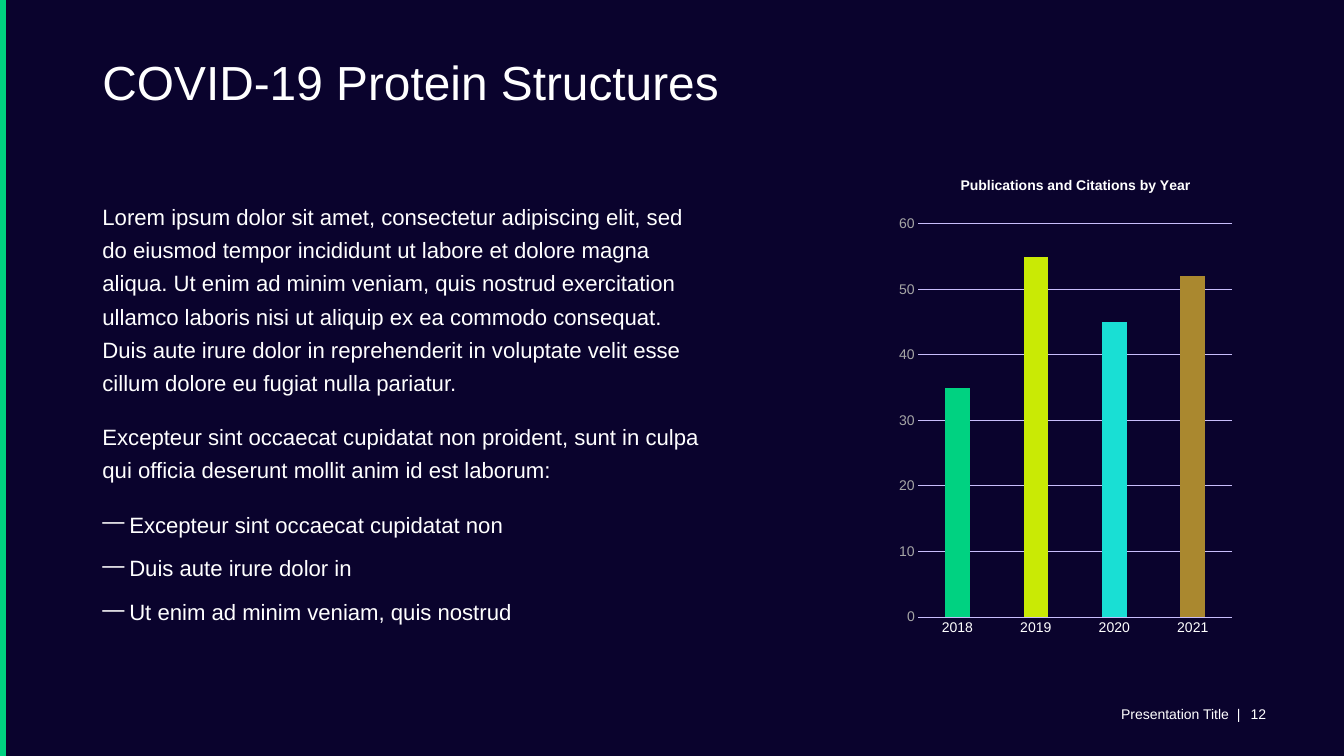
import pptx
import pptx.util
import pptx.chart.data
import pptx.dml.color
import pptx.enum.chart
import pptx.enum.shapes
import pptx.enum.text
import pptx.oxml
import pptx.oxml.ns

Pt = pptx.util.Pt
RGB = pptx.dml.color.RGBColor
ALIGN = pptx.enum.text.PP_ALIGN
NAVY = RGB(0x0A, 0x03, 0x2D)
GREEN = RGB(0x00, 0xD2, 0x81)
LIME = RGB(0xC9, 0xEA, 0x05)
CYAN = RGB(0x19, 0xDF, 0xD4)
GOLD = RGB(0xAA, 0x88, 0x2F)
LILAC = RGB(0xC8, 0xBE, 0xFB)
GREY = RGB(0xA6, 0xA6, 0xA6)
WHITE = RGB(0xFF, 0xFF, 0xFF)

deck = pptx.Presentation()
deck.slide_width, deck.slide_height = Pt(1152), Pt(648)
slide = deck.slides.add_slide(deck.slide_layouts[6])
slide.background.fill.solid()
slide.background.fill.fore_color.rgb = NAVY


def add_text(left, top, width, height, paras, size, lines=1.0,
             align=ALIGN.LEFT, anchor=pptx.enum.text.MSO_ANCHOR.TOP):
    box = slide.shapes.add_textbox(Pt(left), Pt(top), Pt(width), Pt(height))
    frame = box.text_frame
    frame.word_wrap = True
    frame.vertical_anchor = anchor
    frame.margin_left = frame.margin_top = 0
    frame.margin_right = frame.margin_bottom = 0
    for i, (text, gap, mark) in enumerate(paras):
        para = frame.add_paragraph() if i else frame.paragraphs[0]
        para.alignment = align
        para.line_spacing = lines
        para.space_before = Pt(gap)
        if mark:
            props = para._p.get_or_add_pPr()
            props.set("marL", str(Pt(23)))
            props.set("indent", str(-Pt(23)))
            bullet = pptx.oxml.parse_xml(
                f'<a:buChar {pptx.oxml.ns.nsdecls("a")} char="{mark}"/>')
            props.append(bullet)
        for j, line in enumerate(text.split("\n")):
            if j:
                para.add_line_break()
            run = para.add_run()
            run.text = line
            run.font.size = Pt(size)
            run.font.name = "Arial"
            run.font.color.rgb = WHITE


def place(parent, spots):
    tags = "".join(f'<c:{tag} val="{val}"/>' for tag, val in spots)
    return pptx.oxml.parse_xml(
        f'<c:layout {pptx.oxml.ns.nsdecls("c")}><c:manualLayout>'
        f'{tags}</c:manualLayout></c:layout>')


bar = slide.shapes.add_shape(
    pptx.enum.shapes.MSO_SHAPE.RECTANGLE, 0, 0, Pt(5), Pt(648))
bar.shadow.inherit = False
bar.fill.solid()
bar.fill.fore_color.rgb = GREEN
bar.line.fill.background()

add_text(87.84, 50.4, 545, 93, [("COVID-19 Protein Structures", 0, None)], 41, 0.9)
body = [
    ("Lorem ipsum dolor sit amet, consectetur adipiscing elit, sed\n"
     "do eiusmod tempor incididunt ut labore et dolore magna\n"
     "aliqua. Ut enim ad minim veniam, quis nostrud exercitation "
     "ullamco laboris nisi ut aliquip ex ea commodo consequat.\n"
     "Duis aute irure dolor in reprehenderit in voluptate velit esse "
     "cillum dolore eu fugiat nulla pariatur.", 0, None),
    ("Excepteur sint occaecat cupidatat non proident, sunt in culpa\n"
     "qui officia deserunt mollit anim id est laborum:", 18, None),
    ("Excepteur sint occaecat cupidatat non", 18, "―"),
    ("Duis aute irure dolor in", 9, "―"),
    ("Ut enim ad minim veniam, quis nostrud", 9, "―"),
]
add_text(87.84, 168.5, 545, 407.5, body, 19, 1.25)
middle = pptx.enum.text.MSO_ANCHOR.MIDDLE
add_text(789, 594.7, 274.4, 34.6, [("Presentation Title  |", 0, None)], 12,
         align=ALIGN.RIGHT, anchor=middle)
add_text(1072, 594.7, 32.4, 34.6, [("12", 0, None)], 12, anchor=middle)

name = "Publications and Citations by Year"
data = pptx.chart.data.CategoryChartData()
data.categories = ["2018", "2019", "2020", "2021"]
data.add_series(name, [35, 55, 45, 52])
chart = slide.shapes.add_chart(
    pptx.enum.chart.XL_CHART_TYPE.COLUMN_CLUSTERED,
    Pt(764.64), Pt(145.44), Pt(297.36), Pt(407.52), data).chart
chart.has_legend = False
chart.font.name = "Arial"
chart.font.size = Pt(12)
chart.font.color.rgb = WHITE

chart.has_title = True
title = chart.chart_title
run = title.text_frame.paragraphs[0].add_run()
run.text = name
run.font.name = "Arial"
run.font.size = Pt(12)
run.font.bold = True
run.font.color.rgb = WHITE
title.include_in_layout = False

edge = [("xMode", "edge"), ("yMode", "edge")]
head = title._element
for old in head.findall(pptx.oxml.ns.qn("c:layout")):
    head.remove(old)
head.find(pptx.oxml.ns.qn("c:tx")).addnext(
    place(head, edge + [("x", 0.19), ("y", 0.01)]))
area = chart._chartSpace.chart.plotArea
for old in area.findall(pptx.oxml.ns.qn("c:layout")):
    area.remove(old)
area.insert(0, place(area, [("layoutTarget", "inner")] + edge + [
    ("x", 0.075), ("y", 0.114), ("w", 0.905), ("h", 0.827)]))

for axis, shade in ((chart.category_axis, WHITE), (chart.value_axis, GREY)):
    axis.major_tick_mark = pptx.enum.chart.XL_TICK_MARK.NONE
    axis.minor_tick_mark = pptx.enum.chart.XL_TICK_MARK.NONE
    axis.tick_labels.font.name = "Arial"
    axis.tick_labels.font.size = Pt(12)
    axis.tick_labels.font.color.rgb = shade
scale = chart.value_axis
scale.minimum_scale, scale.maximum_scale, scale.major_unit = 0, 60, 10
scale.format.line.fill.background()
scale.has_major_gridlines = True
for line in (chart.category_axis.format.line, scale.major_gridlines.format.line):
    line.color.rgb = LILAC
    line.width = Pt(0.75)

plot = chart.plots[0]
plot.gap_width, plot.overlap = 219, -27
plot.vary_by_categories = False
series = plot.series[0]
series.format.fill.solid()
series.format.fill.fore_color.rgb = GREEN
for i, shade in enumerate((LIME, CYAN, GOLD), 1):
    fill = series.points[i].format.fill
    fill.solid()
    fill.fore_color.rgb = shade

deck.save("out.pptx")
